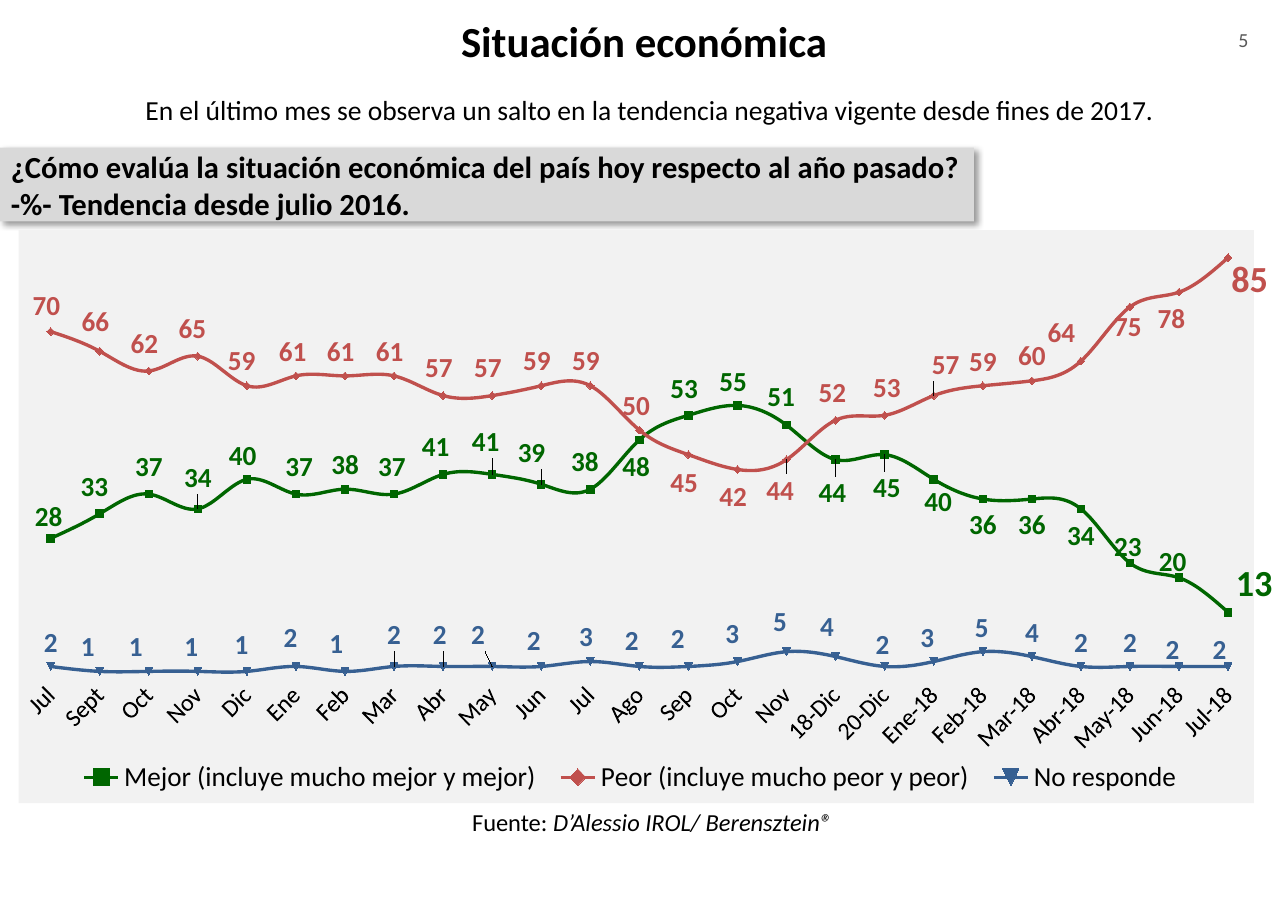
from dataclasses import dataclass
from itertools import chain

from lxml.etree import SubElement
from pptx import Presentation
from pptx.chart.data import CategoryChartData
from pptx.dml.color import RGBColor
from pptx.enum.chart import (XL_CHART_TYPE, XL_LABEL_POSITION, XL_LEGEND_POSITION,
                             XL_MARKER_STYLE, XL_TICK_MARK)
from pptx.enum.shapes import MSO_SHAPE
from pptx.enum.text import MSO_ANCHOR, PP_ALIGN
from pptx.oxml import parse_xml
from pptx.oxml.ns import nsdecls, qn
from pptx.util import Inches, Pt


@dataclass(frozen=True)
class Theme:
    font: str = "Calibri"
    text: str = "000000"
    muted: str = "595959"
    banner: str = "D9D9D9"
    panel: str = "F2F2F2"
    better: str = "006600"
    worse: str = "C0504D"
    no_answer: str = "376092"
    title_size: int = 28
    question_size: int = 20
    body_size: int = 18
    small_size: int = 16
    number_size: int = 13
    latest_size: int = 24


THEME = Theme()
SLIDE_SIZE = (11.69, 8.27)
CHART_BOX = (0.17, 2.09, 11.38, 5.2)
PLOT_AREA = {"x": 0.006, "y": 0.005, "w": 0.993, "h": 0.774}
LEGEND_AREA = {"x": 0.04, "y": 0.92, "w": 0.91, "h": 0.07}

QUESTION = [
    [("¿Cómo evalúa la situación económica del país hoy respecto al año pasado?", False)],
    [("-%- Tendencia desde julio 2016.", False)],
]
SOURCE = [[("Fuente: ", False), ("D’Alessio IROL/ Berensztein®", True)]]

MONTHS = ["Jul", "Sept", "Oct", "Nov", "Dic", "Ene", "Feb", "Mar", "Abr", "May", "Jun", "Jul",
          "Ago", "Sep", "Oct", "Nov", "18-Dic", "20-Dic", "Ene-18", "Feb-18", "Mar-18",
          "Abr-18", "May-18", "Jun-18", "Jul-18"]

ANSWERS = [
    ("Mejor (incluye mucho mejor y mejor)", THEME.better, THEME.latest_size,
     [28, 33, 37, 34, 40, 37, 38, 37, 41, 41, 39, 38, 48,
      53, 55, 51, 44, 45, 40, 36, 36, 34, 23, 20, 13]),
    ("Peor (incluye mucho peor y peor)", THEME.worse, THEME.latest_size,
     [70, 66, 62, 65, 59, 61, 61, 61, 57, 57, 59, 59, 50,
      45, 42, 44, 52, 53, 57, 59, 60, 64, 75, 78, 85]),
    ("No responde", THEME.no_answer, THEME.body_size,
     [2, 1, 1, 1, 1, 2, 1, 2, 2, 2, 2, 3, 2, 2, 3, 5, 4, 2, 3, 5, 4, 2, 2, 2, 2]),
]

LABEL_OFFSETS_IN_HUNDREDTHS = [
    [(-2, -20), (-5, -25), (0, -25), (0, -28), (-4, -21), (3, -25), (0, -22), (-2, -25),
     (-7, -25), (-6, -30), (-9, -29), (-5, -25), (-3, 24), (-4, -24), (-4, -22), (-5, -26),
     (-3, 30), (2, 30), (4, 20), (0, 23), (0, 23), (0, 24), (-2, -15), (-6, -15), (24, -25)],
    [(-4, -23), (-4, -27), (-4, -25), (-5, -25), (-5, -23), (-3, -22), (-4, -22), (-4, -22),
     (-4, -25), (-4, -25), (-4, -23), (-4, -23), (-3, -22), (-4, 25), (-4, 25), (-6, 28),
     (-3, -25), (2, -25), (11, -28), (0, -22), (0, -23), (-18, -26), (-2, 18), (-7, 24),
     (20, 21)],
    [(0, -22), (-11, -22), (-12, -22), (-6, -22), (-5, -24), (-5, -26), (-8, -25), (0, -29),
     (-3, -29), (-13, -29), (-7, -23), (-4, -23), (-7, -23), (-10, -25), (-5, -25), (-6, -27),
     (-8, -27), (-2, -20), (-6, -22), (-1, -22), (0, -22), (0, -22), (0, -22), (-6, -15),
     (-8, -15)],
]

NO_LEADER_LINES = (
    f'<c:extLst {nsdecls("c")}><c:ext uri="{{CE6537A1-D6FC-4f65-9D91-7224C49458BB}}" '
    'xmlns:c15="http://schemas.microsoft.com/office/drawing/2012/chart">'
    '<c15:showLeaderLines val="0"/></c:ext></c:extLst>')


def color(value):
    return RGBColor.from_string(value)


def set_font(font, size, value=THEME.text, bold=False, italic=False):
    font.name = THEME.font
    font.size = Pt(size)
    font.color.rgb = color(value)
    font.bold = bold
    font.italic = italic


def write_text(shape, paragraphs, size=THEME.body_size, value=THEME.text, bold=False,
               align=PP_ALIGN.CENTER, anchor=MSO_ANCHOR.MIDDLE):
    frame = shape.text_frame
    frame.word_wrap = True
    frame.vertical_anchor = anchor
    if isinstance(paragraphs, str):
        paragraphs = [[(paragraphs, False)]]
    for index, runs in enumerate(paragraphs):
        paragraph = frame.add_paragraph() if index else frame.paragraphs[0]
        paragraph.alignment = align
        for text, italic in runs:
            run = paragraph.add_run()
            run.text = text
            set_font(run.font, size, value, bold, italic)


def add_text(slide, box, paragraphs, **text_format):
    write_text(slide.shapes.add_textbox(*map(Inches, box)), paragraphs, **text_format)


def add_question(slide):
    banner = slide.shapes.add_shape(MSO_SHAPE.RECTANGLE, *map(Inches, (0, 1.34, 8.84, 0.67)))
    banner.fill.solid()
    banner.fill.fore_color.rgb = color(THEME.banner)
    banner.line.fill.background()
    banner.shadow.inherit = False
    effects = banner.element.spPr.find(qn("a:effectLst"))
    effects.append(parse_xml(
        f'<a:outerShdw {nsdecls("a")} blurRad="{Pt(4)}" dist="{Pt(3)}" dir="2700000">'
        f'<a:srgbClr val="{THEME.text}"><a:alpha val="40000"/></a:srgbClr></a:outerShdw>'))
    write_text(banner, QUESTION, size=THEME.question_size, bold=True, align=PP_ALIGN.LEFT)


def manual_layout(values, **modes):
    layout = parse_xml(f'<c:layout {nsdecls("c")}><c:manualLayout/></c:layout>')
    for tag, value in {**modes, **values}.items():
        SubElement(layout[0], qn(f"c:{tag}")).set("val", str(value))
    return layout


def replace_layout(parent, position, layout):
    for previous in parent.findall(qn("c:layout")):
        parent.remove(previous)
    parent.insert(position, layout)


def format_series(series, value, latest_size):
    series.smooth = True
    series.format.line.width = Pt(2.25)
    series.format.line.color.rgb = color(value)
    series.marker.style = XL_MARKER_STYLE.AUTOMATIC
    series.marker.size = 5
    series.marker.format.fill.solid()
    series.marker.format.fill.fore_color.rgb = color(value)
    series.marker.format.line.color.rgb = color(value)
    last = len(MONTHS) - 1
    for index in range(len(MONTHS)):
        label = series.points[index].data_label
        set_font(label.font, latest_size if index == last else THEME.body_size, value, bold=True)
        label.position = XL_LABEL_POSITION.CENTER


def add_trend_chart(slide):
    data = CategoryChartData()
    data.categories = MONTHS
    for name, _, _, values in ANSWERS:
        data.add_series(name, values)
    chart = slide.shapes.add_chart(
        XL_CHART_TYPE.LINE_MARKERS, *map(Inches, CHART_BOX), data).chart
    set_font(chart.font, THEME.body_size)
    chart.has_title = False
    chart.has_legend = True
    chart.legend.position = XL_LEGEND_POSITION.BOTTOM
    chart.legend.include_in_layout = False
    set_font(chart.legend.font, THEME.body_size)
    chart.plots[0].vary_by_categories = False

    value_axis = chart.value_axis
    value_axis.minimum_scale, value_axis.maximum_scale = 0, 90
    value_axis.has_major_gridlines = False
    value_axis.visible = False
    month_axis = chart.category_axis
    month_axis.major_tick_mark = XL_TICK_MARK.NONE
    month_axis.format.line.fill.background()
    set_font(month_axis.tick_labels.font, THEME.small_size)

    for series, (_, value, latest_size, _) in zip(chart.plots[0].series, ANSWERS):
        format_series(series, value, latest_size)

    root = chart.element
    root.xpath("//c:catAx/c:txPr/a:bodyPr")[0].set("rot", "-2700000")
    replace_layout(root.xpath("//c:plotArea")[0], 0,
                   manual_layout(PLOT_AREA, layoutTarget="inner", xMode="edge", yMode="edge"))
    replace_layout(root.xpath("//c:legend")[0], 1,
                   manual_layout(LEGEND_AREA, xMode="edge", yMode="edge"))
    root.find(qn("c:chart")).addnext(parse_xml(
        f'<c:spPr {nsdecls("c", "a")}><a:solidFill><a:srgbClr val="{THEME.panel}"/>'
        '</a:solidFill><a:ln><a:noFill/></a:ln></c:spPr>'))
    _, _, width, height = CHART_BOX
    offsets = chain.from_iterable(LABEL_OFFSETS_IN_HUNDREDTHS)
    for label, (right, down) in zip(root.xpath("//c:dLbl"), offsets):
        shift = {"x": right / 100 / width, "y": down / 100 / height}
        label.find(qn("c:idx")).addnext(manual_layout(shift))
    for labels in root.xpath("//c:ser/c:dLbls"):
        labels.append(parse_xml(NO_LEADER_LINES))


def main():
    presentation = Presentation()
    presentation.slide_width, presentation.slide_height = map(Inches, SLIDE_SIZE)
    slide = presentation.slides.add_slide(presentation.slide_layouts[6])
    add_question(slide)
    add_text(slide, (10.84, 0.2, 0.89, 0.44), "5", size=THEME.number_size, value=THEME.muted,
             anchor=MSO_ANCHOR.TOP)
    add_text(slide, (0, -0.1, 11.69, 0.94), "Situación económica", size=THEME.title_size,
             bold=True)
    add_text(slide, (0.72, 0.79, 10.41, 0.4),
             "En el último mes se observa un salto en la tendencia negativa vigente "
             "desde fines de 2017. ")
    add_trend_chart(slide)
    add_text(slide, (4.11, 7.28, 3.62, 0.37), SOURCE, size=THEME.small_size,
             anchor=MSO_ANCHOR.TOP)
    presentation.save("out.pptx")


if __name__ == "__main__":
    main()
